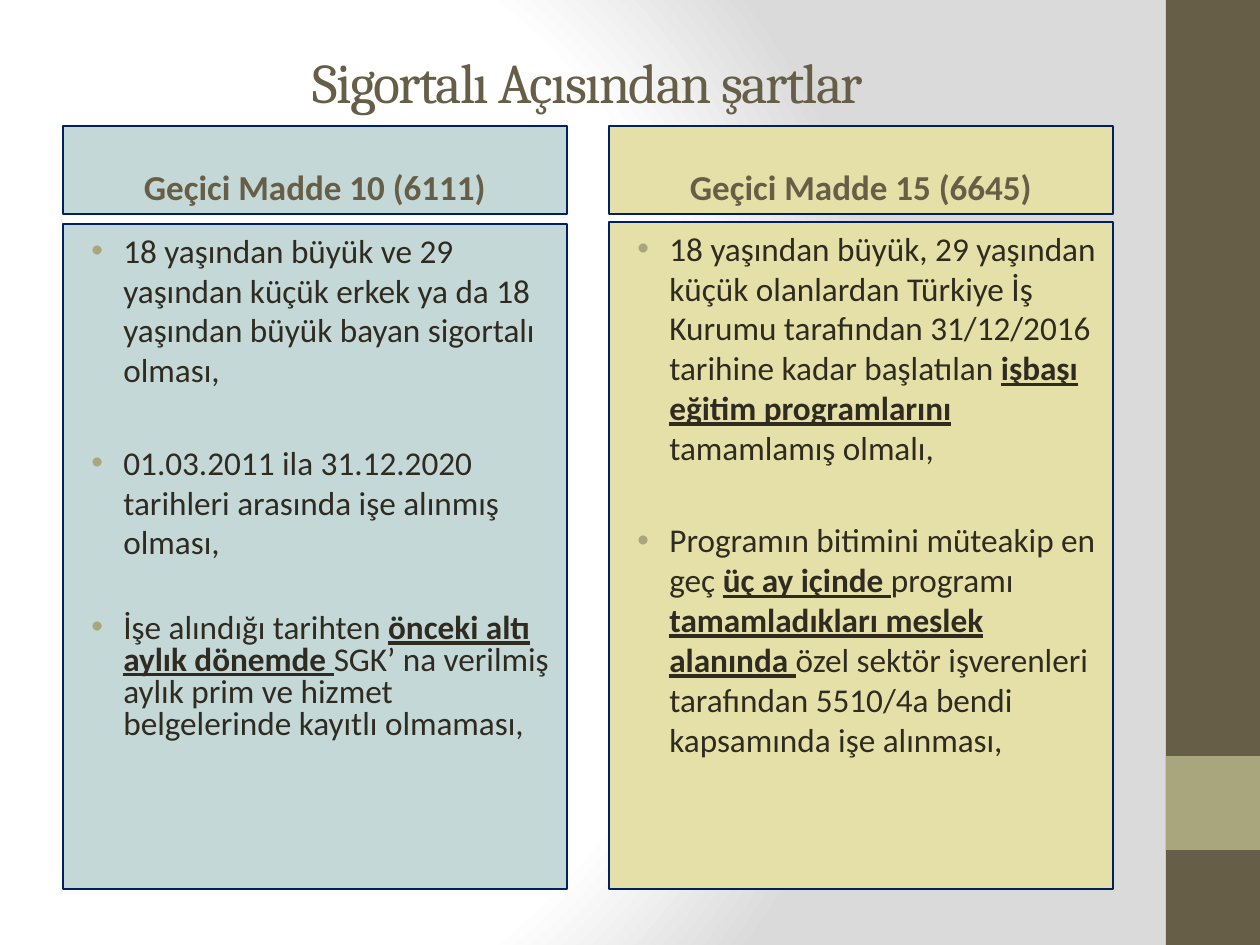
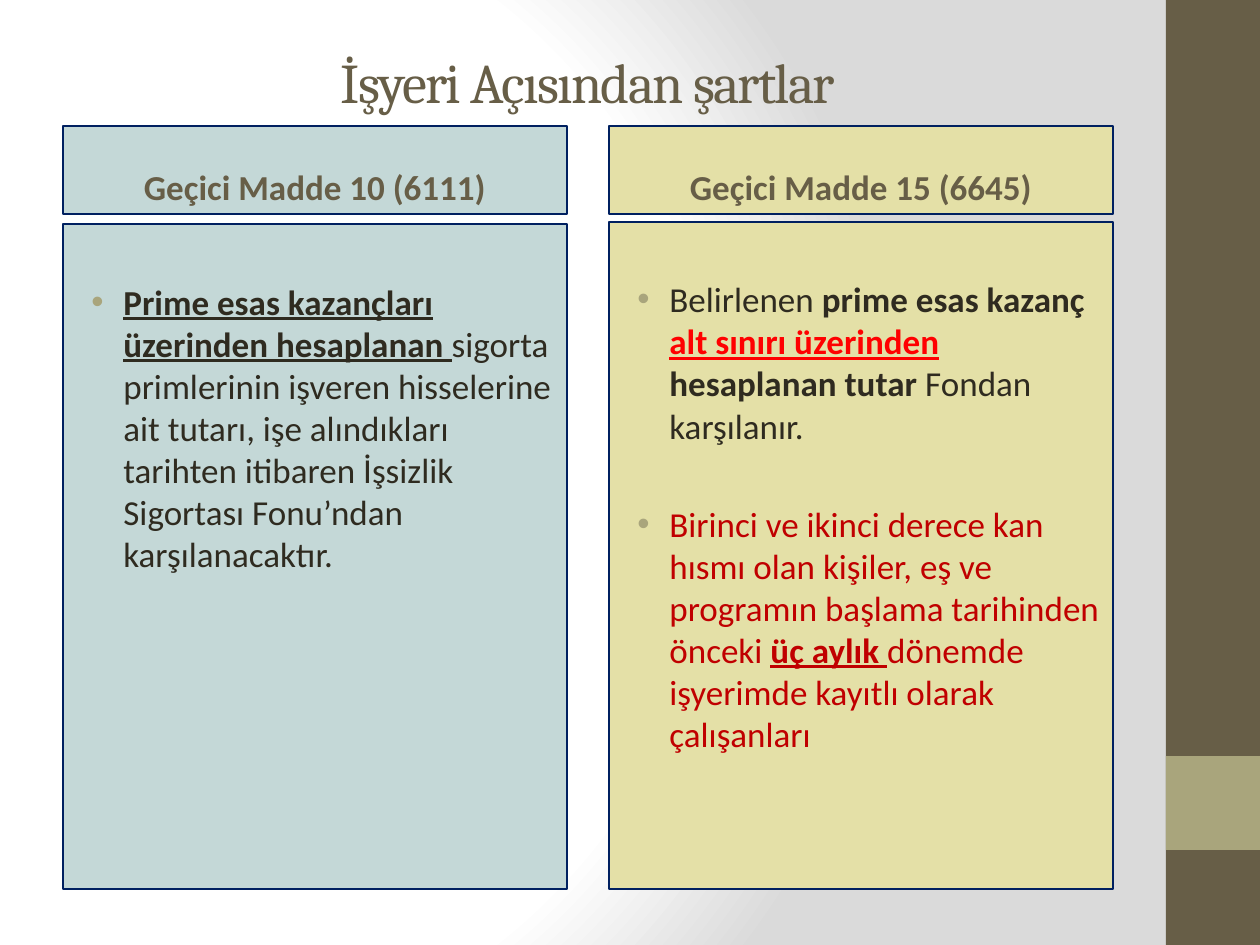
from lxml.etree import SubElement
from pptx import Presentation
from pptx.dml.color import RGBColor
from pptx.enum.shapes import MSO_SHAPE
from pptx.enum.text import MSO_ANCHOR, PP_ALIGN
from pptx.oxml import parse_xml
from pptx.oxml.ns import nsdecls, qn
from pptx.util import Pt

COLORS = {
    "olive": "675E47", "sage": "A9A57C", "ink": "2F2B20", "outline": "002060",
    "blue": "C4D8D7", "yellow": "E4E0A7", "red": "FF0000", "dark_red": "C00000",
    "white": "FFFFFF", "grey": "DADADA",
}
HEADING_FONT, BODY_FONT = "Cambria", "Calibri"

# Run styles: bold, underline, colour
STYLES = {
    "plain": (False, False, "ink"),
    "bold": (True, False, "ink"),
    "key": (True, True, "ink"),
    "alert": (True, True, "red"),
    "warning": (False, False, "dark_red"),
    "warning_key": (True, True, "dark_red"),
}

# Each bullet: line spacing, list of (text, style)
SLIDES = [
    {
        "title": "Sigortalı Açısından şartlar", "size": 19, "text_top": 6,
        "bullets": [
            [
                (1, [("18 yaşından büyük ve 29 yaşından küçük erkek ya da 18 yaşından "
                      "büyük bayan sigortalı olması,", "plain")]),
                (1, [("01.03.2011 ila 31.12.2020 tarihleri arasında işe alınmış olması,",
                      "plain")]),
                (0.8, [("İşe alındığı tarihten ", "plain"),
                       ("önceki altı aylık dönemde ", "key"),
                       ("SGK’ na verilmiş aylık prim ve hizmet belgelerinde kayıtlı "
                        "olmaması,", "plain")]),
            ],
            [
                (1, [("18 yaşından büyük, 29 yaşından küçük olanlardan Türkiye İş Kurumu "
                      "tarafından 31/12/2016 tarihine kadar başlatılan ", "plain"),
                     ("işbaşı eğitim programlarını ", "key"),
                     ("tamamlamış olmalı,", "plain")]),
                (1, [("Programın bitimini müteakip en geç ", "plain"),
                     ("üç ay içinde ", "key"),
                     ("programı ", "plain"),
                     ("tamamladıkları meslek alanında ", "key"),
                     ("özel sektör işverenleri tarafından 5510/4a bendi kapsamında işe "
                      "alınması,", "plain")]),
            ],
        ],
    },
    {
        "title": "İşyeri Açısından şartlar", "size": 20, "text_top": 56,
        "bullets": [
            [
                (1, [("Prime esas kazançları üzerinden hesaplanan ", "key"),
                     ("sigorta primlerinin işveren hisselerine ait tutarı, işe "
                      "alındıkları tarihten itibaren İşsizlik Sigortası Fonu’ndan "
                      "karşılanacaktır.", "plain")]),
            ],
            [
                (1, [("Belirlenen ", "plain"),
                     ("prime esas kazanç ", "bold"),
                     ("alt sınırı üzerinden ", "alert"),
                     ("hesaplanan tutar", "bold"),
                     (" Fondan karşılanır.", "plain")]),
                (1, [("Birinci ve ikinci derece kan hısmı olan kişiler, eş ve programın "
                      "başlama tarihinden önceki ", "warning"),
                     ("üç aylık ", "warning_key"),
                     ("dönemde işyerimde kayıtlı olarak çalışanları", "warning")]),
            ],
        ],
    },
]

# Layout in px, 126 to the inch
SLIDE_WIDTH, SLIDE_HEIGHT = 1260, 945
BAND_LEFT, ACCENT_TOP, ACCENT_HEIGHT = 1166, 756, 94
TITLE_BOX = (63, 38, 1050, 87)
COLUMN_WIDTH, HEADER_TOP, HEADER_HEIGHT, BODY_BOTTOM = 504, 126, 88, 889
COLUMNS = [
    {"heading": "Geçici Madde 10 (6111)", "left": 63, "body_top": 224, "fill": "blue"},
    {"heading": "Geçici Madde 15 (6645)", "left": 609, "body_top": 222, "fill": "yellow"},
]
TEXT_INDENT, BULLET_HANG = 48, 32
BULLET_GAP = 1.6  # space between bullets, in text sizes


def px(length):
    return round(length * 914400 / 126)


def color(name):
    return RGBColor.from_string(COLORS[name])


def add_box(slide, box, fill, line=None):
    shape = slide.shapes.add_shape(MSO_SHAPE.RECTANGLE, *map(px, box))
    shape.shadow.inherit = False
    shape.fill.solid()
    shape.fill.fore_color.rgb = color(fill)
    if line:
        shape.line.color.rgb = color(line)
        shape.line.width = Pt(0.75)
    else:
        shape.line.fill.background()
    return shape


def add_run(paragraph, text, font, size, color_name, bold=False, underline=False):
    run = paragraph.add_run()
    run.text = text
    run.font.name = font
    run.font.size = Pt(size)
    run.font.color.rgb = color(color_name)
    run.font.bold = bold
    run.font.underline = underline
    return run


def set_bullet(paragraph):
    properties = paragraph._p.get_or_add_pPr()
    properties.set("marL", str(px(TEXT_INDENT)))
    properties.set("indent", str(-px(BULLET_HANG)))
    bullet_color = SubElement(properties, qn("a:buClr"))
    SubElement(bullet_color, qn("a:srgbClr"), val=COLORS["sage"])
    SubElement(properties, qn("a:buFont"), typeface="Arial")
    SubElement(properties, qn("a:buChar"), char="•")


def set_background(master):
    master.background.fill.gradient()
    stops = "".join(
        f'<a:gs pos="{percent * 1000}"><a:srgbClr val="{COLORS[name]}"/></a:gs>'
        for percent, name in [(0, "white"), (75, "white"), (100, "grey")])
    gradient = parse_xml(
        f'<a:gradFill {nsdecls("a")} rotWithShape="1"><a:gsLst>{stops}</a:gsLst>'
        '<a:path path="circle"><a:fillToRect l="20000" t="50000" r="100000" b="50000"/>'
        '</a:path></a:gradFill>')
    default = next(master.element.iter(qn("a:gradFill")))
    default.getparent().replace(default, gradient)


def add_frame(slide, title):
    # Side band and its accent
    band_width = SLIDE_WIDTH - BAND_LEFT
    add_box(slide, (BAND_LEFT, 0, band_width, SLIDE_HEIGHT), "olive")
    add_box(slide, (BAND_LEFT, ACCENT_TOP, band_width, ACCENT_HEIGHT), "sage")
    # Title
    text_frame = slide.shapes.add_textbox(*map(px, TITLE_BOX)).text_frame
    text_frame.word_wrap = True
    text_frame.vertical_anchor = MSO_ANCHOR.MIDDLE
    paragraph = text_frame.paragraphs[0]
    paragraph.alignment = PP_ALIGN.CENTER
    run = add_run(paragraph, title, HEADING_FONT, 32, "olive")
    run.font._element.set("spc", "-100")


def add_header(slide, column):
    box = (column["left"], HEADER_TOP, COLUMN_WIDTH, HEADER_HEIGHT)
    text_frame = add_box(slide, box, column["fill"], "outline").text_frame
    text_frame.vertical_anchor = MSO_ANCHOR.BOTTOM
    paragraph = text_frame.paragraphs[0]
    paragraph.alignment = PP_ALIGN.CENTER
    paragraph.line_spacing = 2.0
    add_run(paragraph, column["heading"], BODY_FONT, 20, "olive", bold=True)


def add_body(slide, column, bullets, size, text_top):
    top = column["body_top"]
    box = (column["left"], top, COLUMN_WIDTH, BODY_BOTTOM - top)
    text_frame = add_box(slide, box, column["fill"], "outline").text_frame
    text_frame.vertical_anchor = MSO_ANCHOR.TOP
    text_frame.margin_top = px(text_top)
    for index, (line_spacing, runs) in enumerate(bullets):
        paragraph = text_frame.add_paragraph() if index else text_frame.paragraphs[0]
        paragraph.alignment = PP_ALIGN.LEFT
        paragraph.line_spacing = float(line_spacing)
        paragraph.space_before = Pt(round(BULLET_GAP * size) if index else 0)
        set_bullet(paragraph)
        for text, style in runs:
            bold, underline, color_name = STYLES[style]
            add_run(paragraph, text, BODY_FONT, size, color_name, bold, underline)


def main():
    presentation = Presentation()
    presentation.slide_width = px(SLIDE_WIDTH)
    presentation.slide_height = px(SLIDE_HEIGHT)
    set_background(presentation.slide_master)
    for content in SLIDES:
        slide = presentation.slides.add_slide(presentation.slide_layouts[6])
        add_frame(slide, content["title"])
        for column, bullets in zip(COLUMNS, content["bullets"]):
            add_header(slide, column)
            add_body(slide, column, bullets, content["size"], content["text_top"])
    presentation.save("out.pptx")


if __name__ == "__main__":
    main()
